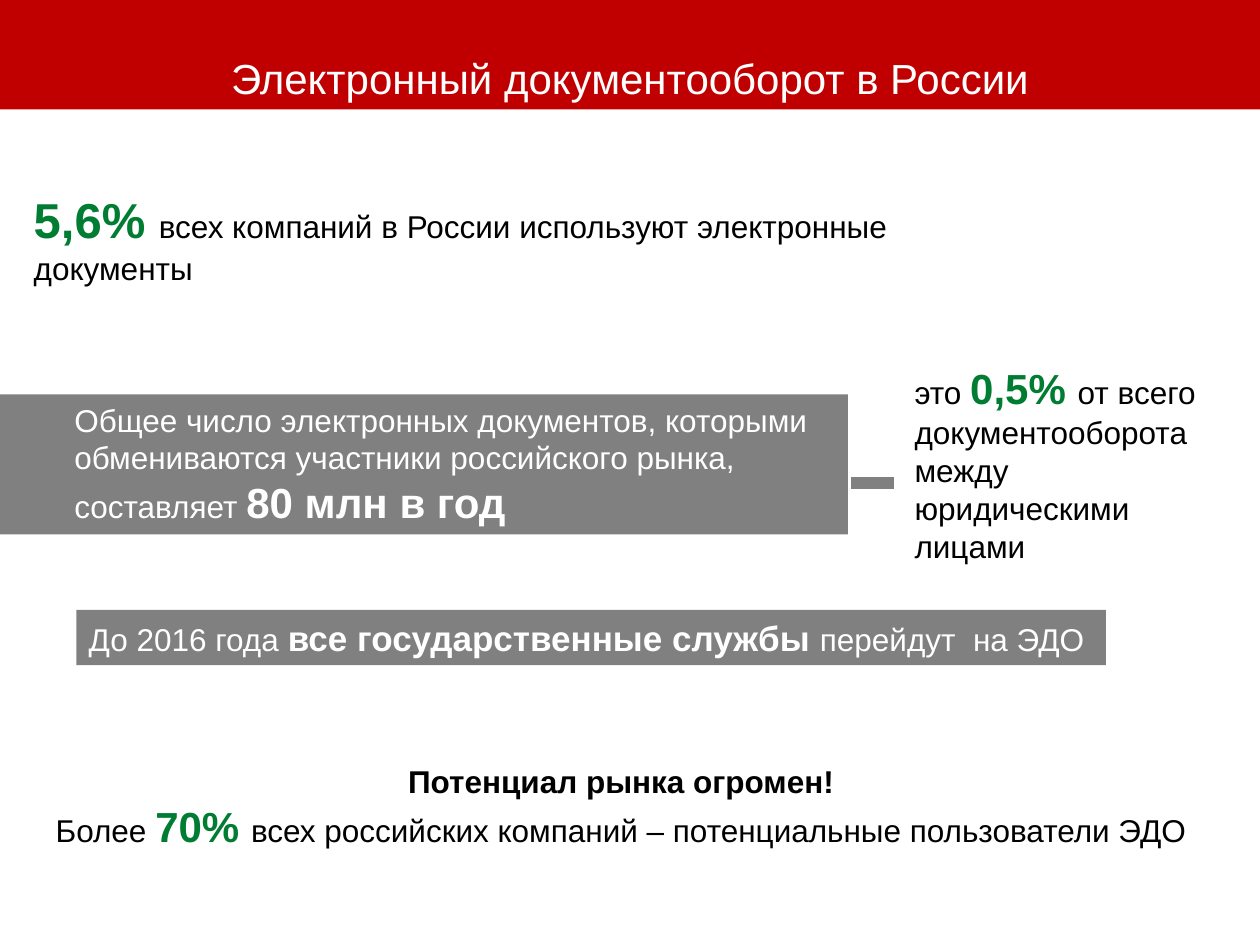
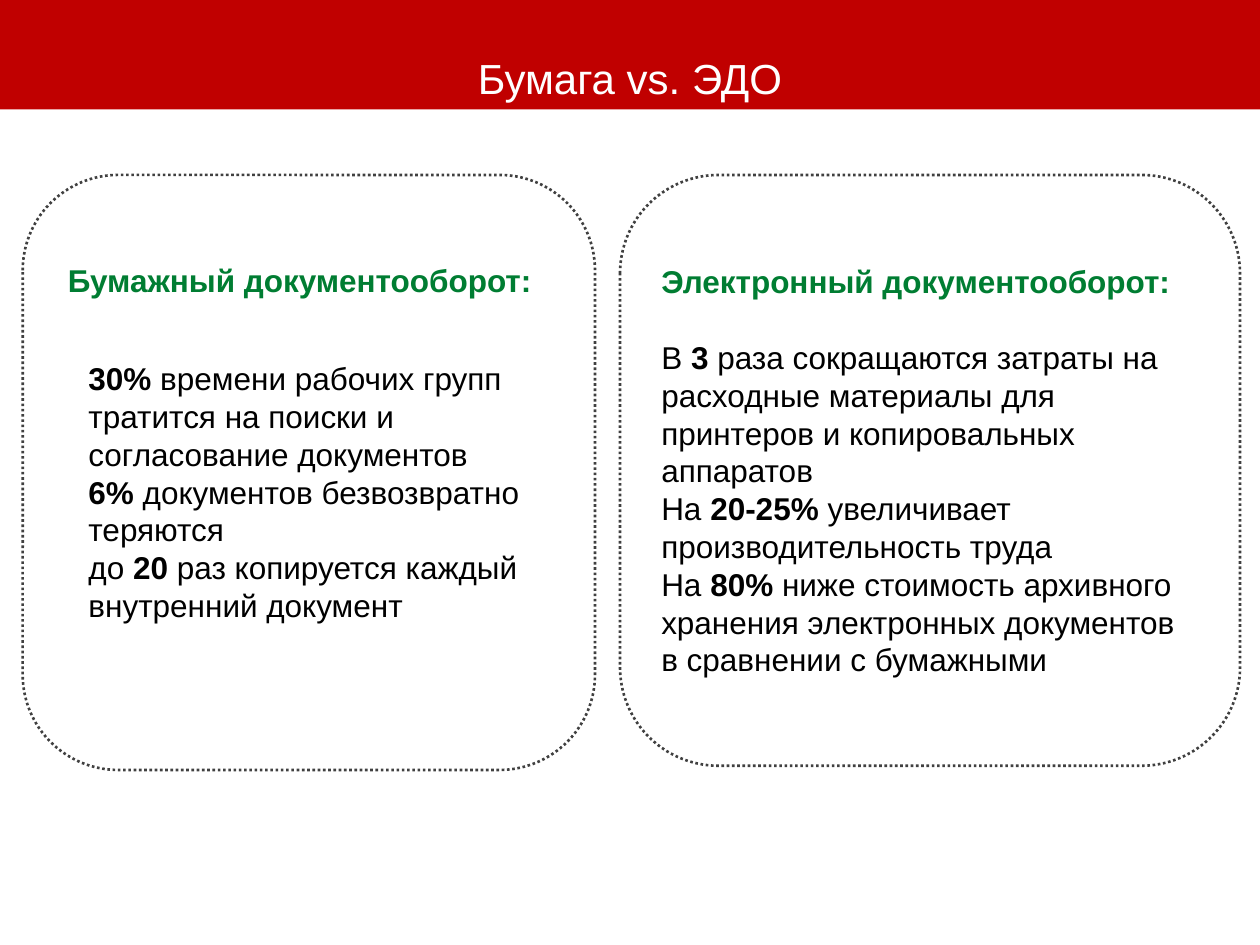
import dataclasses
import typing

import pptx
import pptx.dml.color
import pptx.enum.dml
import pptx.enum.shapes
import pptx.enum.text
import pptx.util

Pt = pptx.util.Pt
Kind = pptx.enum.shapes.MSO_SHAPE
Side = pptx.enum.text.PP_ALIGN
Hold = pptx.enum.text.MSO_ANCHOR

FONT = "Arial"
RED, GREEN, GREY = "C00000", "007D32", "808080"
WHITE, BLACK, DARK = "FFFFFF", "000000", "404040"
WIDE, HIGH = 720, 540
BAND = 62.6
BODY, LARGE = 18, 24
TOP = 100


class Run(typing.NamedTuple):
    text: str
    bold: bool = False
    size: float = BODY
    color: str = BLACK


class Para(typing.NamedTuple):
    runs: list[Run]
    after: float = 0
    gap: float = 1


@dataclasses.dataclass
class Box:
    left: float
    top: float
    width: float
    height: float
    paras: list[Para] = dataclasses.field(default_factory=list)
    kind: typing.Any = None
    fill: str = ""
    line: str = ""
    align: typing.Any = Side.LEFT
    anchor: typing.Any = Hold.TOP
    inset: float = 7.2
    head: float = 3.6
    wrap: bool = True


def paint(target: typing.Any, color: str) -> None:
    target.rgb = pptx.dml.color.RGBColor.from_string(color)


def write(para: typing.Any, text: str, *, bold: bool, size: float, color: str) -> None:
    run = para.add_run()
    run.text = text
    run.font.name = FONT
    run.font.size = Pt(size)
    run.font.bold = bold
    paint(run.font.color, color)


def fill_text(frame: typing.Any, box: Box) -> None:
    frame.word_wrap = box.wrap
    frame.vertical_anchor = box.anchor
    frame.margin_left, frame.margin_right = Pt(box.inset), Pt(7.2)
    frame.margin_top, frame.margin_bottom = Pt(box.head), Pt(3.6)
    for index, item in enumerate(box.paras):
        para = frame.add_paragraph() if index else frame.paragraphs[0]
        para.alignment = box.align
        para.space_after = Pt(item.after)
        para.line_spacing = item.gap
        for run in item.runs:
            write(para, **run._asdict())


def draw(slide: typing.Any, box: Box) -> None:
    place = [Pt(n) for n in (box.left, box.top, box.width, box.height)]
    if box.kind is None:
        shape = slide.shapes.add_textbox(*place)
    else:
        shape = slide.shapes.add_shape(box.kind, *place)
        shape.shadow.inherit = False
        shape.fill.solid()
        paint(shape.fill.fore_color, box.fill)
        if box.line:
            paint(shape.line.color, box.line)
            shape.line.width = Pt(1.5)
            shape.line.dash_style = pptx.enum.dml.MSO_LINE.ROUND_DOT
        else:
            shape.line.fill.background()
    if box.paras:
        fill_text(shape.text_frame, box)


def banner(title: str) -> Box:
    return Box(0, 0, WIDE, BAND, [Para([Run(title, size=LARGE, color=WHITE)], gap=0.9)],
               Kind.RECTANGLE, RED, align=Side.CENTER, anchor=Hold.BOTTOM)


def panel(left: float, width: float, height: float, paras: list[Para], **style: float) -> Box:
    return Box(left, TOP, width, height, paras, Kind.ROUNDED_RECTANGLE,
               WHITE, DARK, anchor=Hold.MIDDLE, **style)


def label(text: str, after: float = 0) -> Para:
    return Para([Run(text, True, color=GREEN)], after)


def fact(before: str, figure: str, rest: str) -> Para:
    parts = [Run(before), Run(figure, True), Run(rest)]
    return Para([part for part in parts if part.text])


MARKET = [
    banner("Электронный документооборот в России"),
    Box(12.2, 105, 527, 63.4, [Para([
        Run("5,6% ", True, 28, GREEN),
        Run("всех компаний в России используют электронные документы")])]),
    Box(0, 225.4, 484.6, 79.9, [Para([
        Run("Общее число электронных документов, которыми обмениваются "
            "участники российского рынка, составляет ", color=WHITE),
        Run("80 млн в год", True, LARGE, WHITE)])],
        Kind.RECTANGLE, GREY, inset=42.5),
    Box(481.7, 262, 33.8, 28, kind=Kind.MATH_MINUS, fill=GREY),
    Box(515.5, 203.8, 193, 123.8, [Para([
        Run("это "), Run("0,5% ", True, LARGE, GREEN),
        Run("от всего документооборота между юридическими лицами")])]),
    Box(43.6, 348.5, 588.4, 31.6, [Para([
        Run("До 2016 года ", color=WHITE),
        Run("все государственные службы ", True, 20, WHITE),
        Run("перейдут  на ЭДО", color=WHITE)])],
        Kind.RECTANGLE, GREY, wrap=False),
    Box(13.7, 432, 682.5, 58.3, [
        Para([Run("Потенциал рынка огромен!", True)]),
        Para([Run("Более "), Run("70% ", True, LARGE, GREEN),
              Run("всех российских компаний – потенциальные пользователи ЭДО")])],
        align=Side.CENTER),
]

VERSUS = [
    banner("Бумага vs. ЭДО"),
    panel(13, 327, 340, [
        fact("", "30% ", "времени рабочих групп тратится на поиски и согласование документов"),
        fact("", "6% ", "документов безвозвратно теряются"),
        fact("до ", "20 ", "раз копируется каждый внутренний документ")],
        inset=21.6, head=25.2),
    panel(354.3, 354.3, 337.6, [
        label("Электронный документооборот:", after=21.6),
        fact("В ", "3", " раза сокращаются затраты на расходные материалы "
             "для принтеров и копировальных аппаратов"),
        fact("На ", "20-25%", " увеличивает производительность труда"),
        fact("На ", "80% ", "ниже стоимость архивного хранения электронных "
             "документов в сравнении с бумажными")]),
    Box(31.7, 145.4, 282, 29, [label("Бумажный документооборот:")], wrap=False),
]


def main() -> None:
    deck = pptx.Presentation()
    deck.slide_width, deck.slide_height = Pt(WIDE), Pt(HIGH)
    for boxes in (MARKET, VERSUS):
        slide = deck.slides.add_slide(deck.slide_layouts[6])
        for box in boxes:
            draw(slide, box)
    deck.save("out.pptx")


if __name__ == "__main__":
    main()
